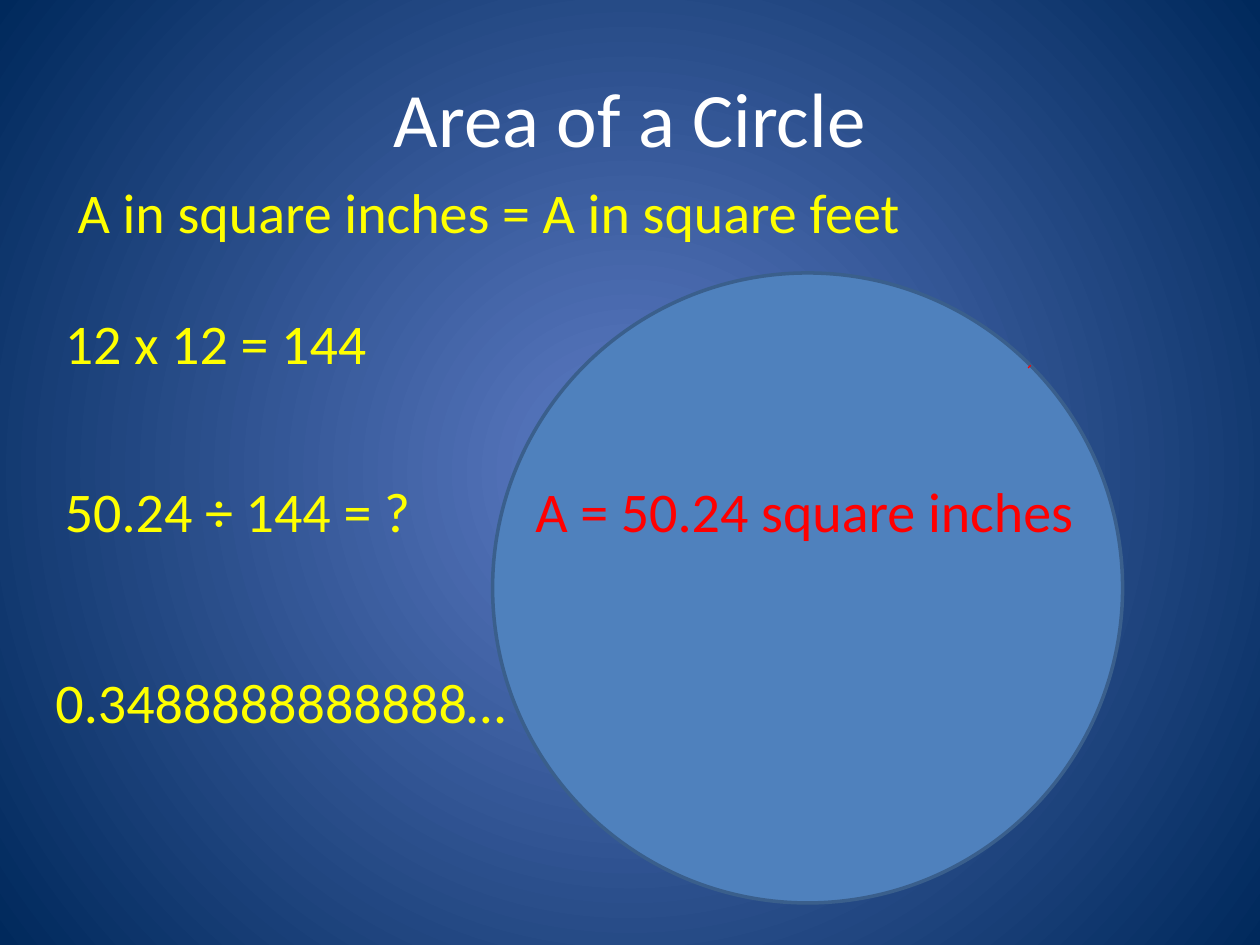
import pptx
import pptx.dml.color
import pptx.enum.shapes
import pptx.enum.text
import pptx.oxml
import pptx.oxml.ns
import pptx.util
from lxml import etree

Pt = pptx.util.Pt
qn = pptx.oxml.ns.qn

COLORS = {
    "glow": "5E7CC5",
    "navy": "00295C",
    "title": "FFFFFF",
    "working": "FFFF00",
    "answer": "FF0000",
    "circle": "4F81BD",
    "outline": "3A5F8C",
}


def rgb(name):
    return pptx.dml.color.RGBColor.from_string(COLORS[name])


class SlideBuilder:
    font = "Calibri"
    title_size = 44
    text_size = 32
    text_height = 46
    inset = 7.2

    def __init__(self, slide):
        self.slide = slide

    def background(self, center, edge):
        """Fill the slide with a gradient that spreads in circles from its center."""
        fill = self.slide.background.fill
        fill.gradient()
        for stop, color in zip(fill.gradient_stops, (center, edge)):
            stop.color.rgb = rgb(color)
        gradient = self.slide.element.find(".//" + qn("a:gradFill"))
        gradient.remove(gradient.find(qn("a:lin")))
        circle = etree.SubElement(gradient, qn("a:path"), path="circle")
        etree.SubElement(circle, qn("a:fillToRect"),
                         dict.fromkeys("ltrb", "50000"))

    def add_run(self, paragraph, text, size, color):
        run = paragraph.add_run()
        run.text = text
        run.font.name = self.font
        run.font.size = Pt(size)
        run.font.color.rgb = rgb(color)

    def title(self, text, left, top, width, height):
        shape = self.slide.shapes.title
        shape.left, shape.top = Pt(left), Pt(top)
        shape.width, shape.height = Pt(width), Pt(height)
        shape.text_frame.vertical_anchor = pptx.enum.text.MSO_ANCHOR.MIDDLE
        paragraph = shape.text_frame.paragraphs[0]
        paragraph.alignment = pptx.enum.text.PP_ALIGN.CENTER
        self.add_run(paragraph, text, self.title_size, "title")

    def circle(self, left, top, diameter):
        shape = self.slide.shapes.add_shape(
            pptx.enum.shapes.MSO_SHAPE.OVAL,
            Pt(left), Pt(top), Pt(diameter), Pt(diameter))
        shape.shadow.inherit = False
        shape.fill.solid()
        shape.fill.fore_color.rgb = rgb("circle")
        shape.line.color.rgb = rgb("outline")
        shape.line.width = Pt(2)

    def line(self, start, end, color):
        connector = self.slide.shapes.add_connector(
            pptx.enum.shapes.MSO_CONNECTOR.STRAIGHT,
            *(Pt(value) for value in (*start, *end)))
        connector.line.color.rgb = rgb(color)
        connector.line.width = Pt(0.75)
        properties = connector.element.find(qn("p:spPr"))
        etree.SubElement(properties, qn("a:effectLst"))

    def text(self, text, left, top, width, color="working", indent=0):
        box = self.slide.shapes.add_textbox(
            Pt(left), Pt(top), Pt(width), Pt(self.text_height))
        frame = box.text_frame
        frame.word_wrap = False
        frame.auto_size = pptx.enum.text.MSO_AUTO_SIZE.SHAPE_TO_FIT_TEXT
        frame.margin_left = Pt(self.inset + indent)
        self.add_run(frame.paragraphs[0], text, self.text_size, color)


def main():
    presentation = pptx.Presentation()
    presentation.slide_width, presentation.slide_height = Pt(720), Pt(540)
    title_only = presentation.slide_layouts[5]
    builder = SlideBuilder(presentation.slides.add_slide(title_only))

    builder.background("glow", "navy")
    builder.title("Area of a Circle", 36, 21.6, 648, 90)
    builder.circle(281.5, 156, 360)
    builder.line((589, 208.8), (587.5, 210.2), "answer")

    division_top = 268.5
    builder.text("A = 50.24 square inches", 298.8, division_top, 325.5, "answer")
    builder.text("12 x 12 = 144", 30, 172.8, 188.6)
    builder.text("A in square inches = A in square feet", 30, 98, 496.8, indent=7.2)
    builder.text("50.24 ÷ 144 = ?", 30, division_top, 214.6)
    builder.text("0.3488888888888…", 17.3, 378, 282.2, indent=7.2)

    presentation.save("out.pptx")


if __name__ == "__main__":
    main()
